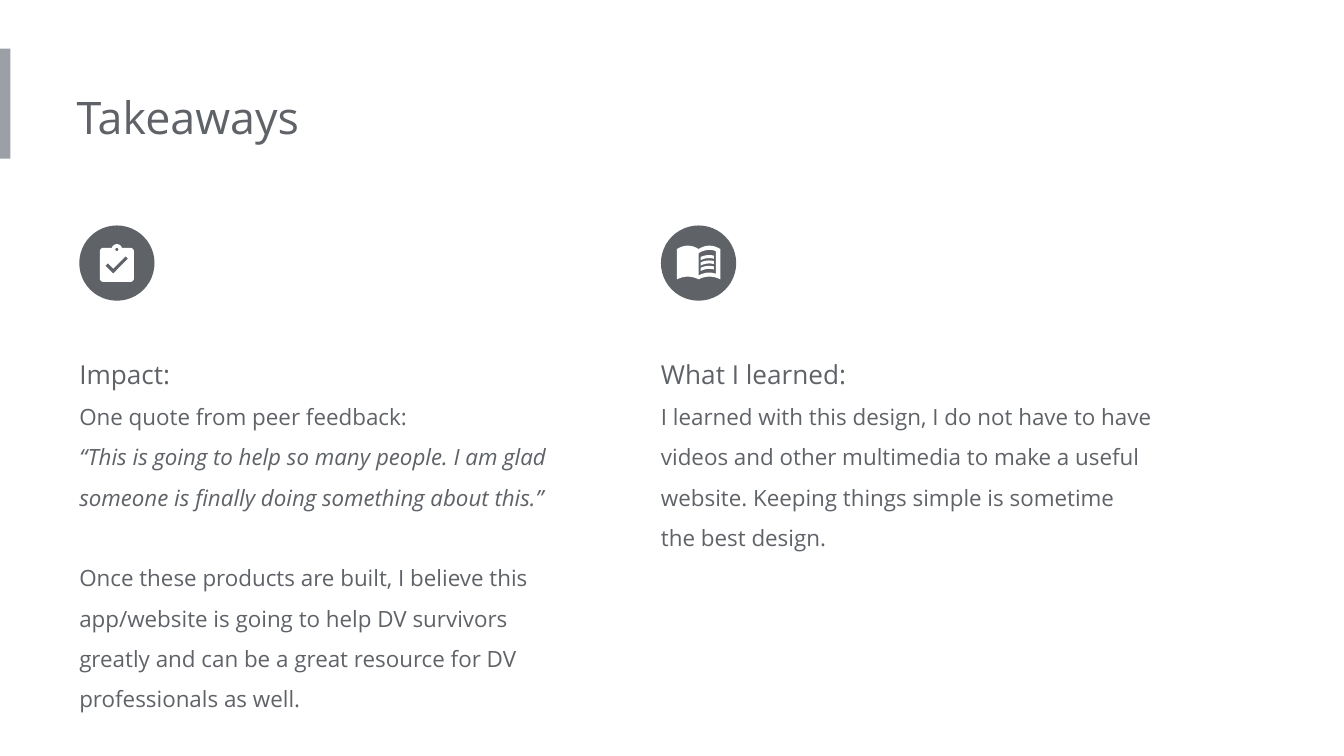
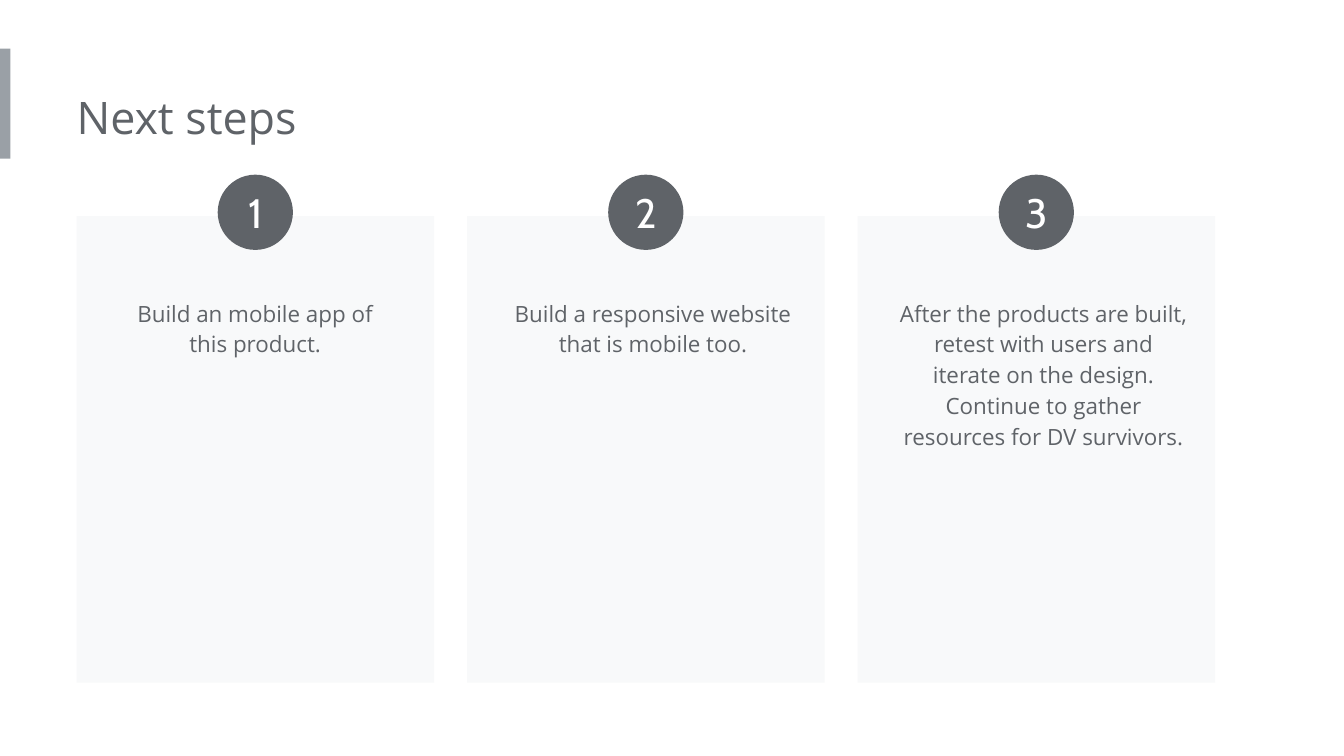
"""Build the takeaways and next steps slides."""
import dataclasses
import math
import typing

import pptx
import pptx.dml.color
import pptx.enum.shapes
import pptx.enum.text
import pptx.util

Pt = pptx.util.Pt
RGBColor = pptx.dml.color.RGBColor
Align = pptx.enum.text.PP_ALIGN
Anchor = pptx.enum.text.MSO_ANCHOR
AutoSize = pptx.enum.text.MSO_AUTO_SIZE
Preset = pptx.enum.shapes.MSO_SHAPE

Point = typing.Tuple[float, float]
Contour = typing.List[Point]
Outline = typing.List[Contour]


@dataclasses.dataclass(frozen=True)
class Theme:
    """Colours, fonts and type sizes of the deck."""
    ink: RGBColor = RGBColor.from_string("5F6368")
    band: RGBColor = RGBColor.from_string("9AA0A6")
    card: RGBColor = RGBColor.from_string("F8F9FA")
    white: RGBColor = RGBColor.from_string("FFFFFF")
    text_font: str = "Open Sans"
    number_font: str = "Cabin"
    title_size: float = 24
    number_size: float = 22
    heading_size: float = 14
    body_size: float = 12


THEME = Theme()
INSET = 7.2
BADGE = 40.3


@dataclasses.dataclass(frozen=True)
class Box:
    """A rectangle in points."""
    left: float
    top: float
    width: float
    height: float

    def lengths(self) -> typing.List[pptx.util.Length]:
        """Return left, top, width and height as lengths."""
        return [Pt(value) for value in dataclasses.astuple(self)]


@dataclasses.dataclass(frozen=True)
class Line:
    """A paragraph with its type."""
    text: str
    size: float = THEME.body_size
    italic: bool = False
    space_before: float = 0
    spacing: float = 1.0
    align: Align = Align.LEFT
    font: str = THEME.text_font
    colour: RGBColor = THEME.ink


@dataclasses.dataclass(frozen=True)
class Column:
    """A takeaway with an icon above its text."""
    left: float
    height: float
    icon: typing.List[Outline]
    lines: typing.List[Line]


@dataclasses.dataclass(frozen=True)
class Step:
    """A next step and the width of its text."""
    text: str
    width: float
    height: float


def arc(centre: Point, radius: float, start: int, end: int) -> Contour:
    """Return points along a circle, angles in degrees clockwise from the right."""
    angles = [math.radians(start + (end - start) * i / 8) for i in range(9)]
    return [(centre[0] + radius * math.cos(a), centre[1] + radius * math.sin(a)) for a in angles]


def curve(start: Point, control: Point, end: Point) -> Contour:
    """Return points along a quadratic curve."""
    def blend(t: float, axis: int) -> float:
        """Return one coordinate at t."""
        return ((1 - t) ** 2 * start[axis] + 2 * t * (1 - t) * control[axis]
                + t ** 2 * end[axis])
    return [(blend(i / 8, 0), blend(i / 8, 1)) for i in range(9)]


def clipboard_icon() -> typing.List[Outline]:
    """Return a clipboard with a clip and a tick."""
    left, top, right, bottom, corner = 11, 12, 29.3, 30.3, 2
    middle = (left + right) / 2
    board = (arc((left + corner, top + corner), corner, 180, 270)
             + arc((middle, top + 0.8), 2.8, 196, 344)
             + arc((right - corner, top + corner), corner, 270, 360)
             + arc((right - corner, bottom - corner), corner, 0, 90)
             + arc((left + corner, bottom - corner), corner, 90, 180))
    hole = arc((middle, top + 0.9), 0.9, 0, 360)
    tick = [(18.2, 25.8), (14, 21.6), (15.3, 20.3), (18.2, 23.1), (24.8, 16.5), (26.1, 17.8)]
    return [[board, hole, tick]]


def book_icon() -> typing.List[Outline]:
    """Return an open book with three lines on its right page."""
    left, spine, right = 8.6, 20.2, 31.8
    cover = (curve((left, 12.6), (14.4, 9), (spine, 12.6))
             + curve((spine, 12.6), (26, 9), (right, 12.6))
             + curve((right, 28.8), (26, 26), (spine, 28.8))
             + curve((spine, 28.8), (14.4, 26), (left, 28.8)))
    page = (curve((spine, 14.8), (25, 12), (29.5, 13.7))
            + curve((29.5, 25.9), (25, 24.2), (spine, 26.8)))
    rows = [curve((21.3, top), (24.8, top - 1.6), (28.4, top - 0.7))
            + curve((28.4, top + 0.9), (24.8, top), (21.3, top + 1.7))
            for top in (16.9, 19.8, 22.7)]
    return [[cover, page]] + [[row] for row in rows]


def apply_format(target: typing.Any, values: typing.Dict[str, typing.Any]) -> None:
    """Set each named attribute on the target."""
    for name, value in values.items():
        setattr(target, name, value)


def paint(shape: typing.Any, colour: RGBColor) -> None:
    """Fill a shape plainly, with no line or shadow."""
    shape.shadow.inherit = False
    shape.fill.solid()
    shape.fill.fore_color.rgb = colour
    shape.line.fill.background()


def write(shape: typing.Any, lines: typing.List[Line],
          frame_format: typing.Dict[str, typing.Any]) -> None:
    """Write paragraphs into a shape."""
    frame = shape.text_frame
    apply_format(frame, {"word_wrap": True, **frame_format})
    for index, line in enumerate(lines):
        paragraph = frame.add_paragraph() if index else frame.paragraphs[0]
        paragraph.text = line.text
        apply_format(paragraph, {"alignment": line.align, "line_spacing": line.spacing,
                                 "space_before": Pt(line.space_before)})
        apply_format(paragraph.font, {"name": line.font, "size": Pt(line.size),
                                      "italic": line.italic})
        paragraph.font.color.rgb = line.colour


def text_format(left_inset: float, auto_size: AutoSize) -> typing.Dict[str, typing.Any]:
    """Return the frame format of top-anchored text."""
    return {"margin_left": Pt(left_inset), "margin_top": Pt(INSET), "margin_right": Pt(INSET),
            "margin_bottom": Pt(INSET), "vertical_anchor": Anchor.TOP, "auto_size": auto_size}


def add_block(slide: typing.Any, preset: Preset, box: Box, colour: RGBColor) -> typing.Any:
    """Add a plain preset shape."""
    shape = slide.shapes.add_shape(preset, *box.lengths())
    paint(shape, colour)
    return shape


def add_text(slide: typing.Any, box: Box, lines: typing.List[Line], left_inset: float) -> None:
    """Add a text box that grows with its text."""
    shape = slide.shapes.add_textbox(*box.lengths())
    write(shape, lines, text_format(left_inset, AutoSize.SHAPE_TO_FIT_TEXT))


def add_icon(slide: typing.Any, icon: typing.List[Outline], left: float, top: float) -> None:
    """Draw the outlines of an icon, grouped when there are several."""
    shapes = slide.shapes.add_group_shape().shapes if len(icon) > 1 else slide.shapes
    for outline in icon:
        contours = [[(Pt(x), Pt(y)) for x, y in contour] for contour in outline]
        builder = shapes.build_freeform(*contours[0][0])
        for index, contour in enumerate(contours):
            if index:
                builder.move_to(*contour[0])
            builder.add_line_segments(contour[1:], close=True)
        paint(builder.convert_to_shape(Pt(left), Pt(top)), THEME.white)


def add_titled_slide(presentation: typing.Any, title: str) -> typing.Any:
    """Add a slide with the side band and a title."""
    slide = presentation.slides.add_slide(presentation.slide_layouts.get_by_name("Title Only"))
    add_block(slide, Preset.RECTANGLE, Box(0, 26, 5.6, 59), THEME.band)
    shape = slide.shapes.title
    left, top, width, height = Box(41, 41, 388, 44).lengths()
    apply_format(shape, {"left": left, "top": top, "width": width, "height": height})
    write(shape, [Line(title, THEME.title_size)], text_format(0, AutoSize.NONE))
    return slide


def add_column(slide: typing.Any, column: Column) -> None:
    """Add a takeaway column."""
    badge_top = 120.8
    add_text(slide, Box(column.left, 176.4, 271.4, column.height), column.lines, 0)
    add_block(slide, Preset.OVAL, Box(column.left, badge_top, BADGE, BADGE), THEME.ink)
    add_icon(slide, column.icon, column.left, badge_top)


def add_step(slide: typing.Any, number: int, step: Step) -> None:
    """Add a numbered step card."""
    width = 191.6
    left = 41 + 209.2 * (number - 1)
    add_block(slide, Preset.RECTANGLE, Box(left, 115.8, width, 250), THEME.card)
    line = Line(step.text, spacing=1.15, align=Align.CENTER)
    add_text(slide, Box(left + 15.1, 151.2, step.width, step.height), [line], INSET)
    badge = add_block(slide, Preset.OVAL,
                      Box(left + (width - BADGE) / 2, 93.6, BADGE, BADGE), THEME.ink)
    digit = Line(str(number), THEME.number_size, align=Align.CENTER,
                 font=THEME.number_font, colour=THEME.white)
    margins = {f"margin_{side}": 0 for side in ("left", "top", "right", "bottom")}
    write(badge, [digit], {**margins, "vertical_anchor": Anchor.MIDDLE})


def main() -> None:
    """Build and save the presentation."""
    presentation = pptx.Presentation()
    apply_format(presentation, {"slide_width": Pt(720), "slide_height": Pt(405)})

    takeaways = add_titled_slide(presentation, "Takeaways")
    columns = [
        Column(42.5, 229, clipboard_icon(), [
            Line("Impact:", THEME.heading_size, spacing=1.5),
            Line("One quote from peer feedback:", spacing=1.5),
            Line("“This is going to help so many people. I am glad someone is finally "
                 "doing something about this.”", italic=True, spacing=1.5),
            Line("Once these products are built, I believe this app/website is going to "
                 "help DV survivors greatly and can be a great resource for DV "
                 "professionals as well.", space_before=21.6, spacing=1.5),
        ]),
        Column(354.1, 120.2, book_icon(), [
            Line("What I learned:", THEME.heading_size, spacing=1.5),
            Line("I learned with this design, I do not have to have videos and other "
                 "multimedia to make a useful website. Keeping things simple is sometime "
                 "the best design.", spacing=1.5),
        ]),
    ]
    for column in columns:
        add_column(takeaways, column)

    next_steps = add_titled_slide(presentation, "Next steps")
    steps = [
        Step("Build an mobile app of this product.", 161.3, 46),
        Step("Build a responsive website that is mobile too.", 169.2, 46),
        Step("After the products are built, retest with users and iterate on the design. "
             "Continue to gather resources for DV survivors.", 169.2, 95.8),
    ]
    for number, step in enumerate(steps, start=1):
        add_step(next_steps, number, step)

    presentation.save("out.pptx")


if __name__ == "__main__":
    main()
